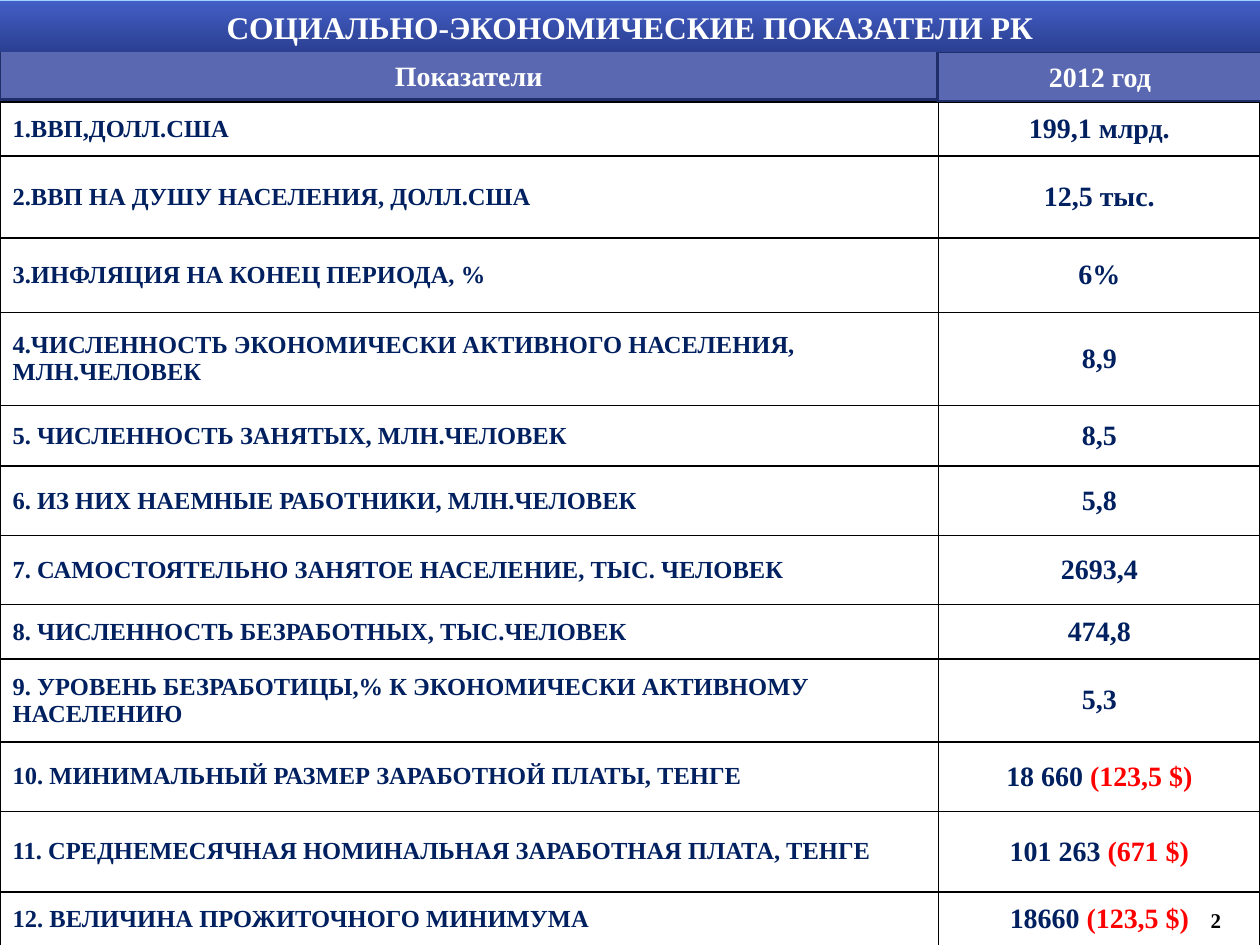
import dataclasses

import lxml.etree
import pptx
import pptx.dml.color
import pptx.enum.shapes
import pptx.enum.text
import pptx.oxml.ns
import pptx.util

Inches = pptx.util.Inches
PP_ALIGN = pptx.enum.text.PP_ALIGN
MIDDLE = pptx.enum.text.MSO_ANCHOR.MIDDLE


@dataclasses.dataclass(frozen=True)
class Theme:
    font: str = "Times New Roman"
    background: str = "9ED5FF"
    title_top: str = "435EC5"
    title_bottom: str = "2B4092"
    header: str = "5968B0"
    header_line: str = "1F2E69"
    text: str = "002060"
    accent: str = "FF0000"
    white: str = "FFFFFF"
    black: str = "000000"
    title_size: int = 18
    value_size: int = 16
    label_size: int = 14
    number_size: int = 12


THEME = Theme()

COLUMN_WIDTHS = (7.45, 2.55)
INDICATORS = [
    (0.43, "1.ВВП,ДОЛЛ.США", "199,1 млрд.", ""),
    (0.65, "2.ВВП НА ДУШУ НАСЕЛЕНИЯ, ДОЛЛ.США", "12,5 тыс.", ""),
    (0.59, "3.ИНФЛЯЦИЯ НА КОНЕЦ ПЕРИОДА, %", "6%", ""),
    (0.74, "4.ЧИСЛЕННОСТЬ ЭКОНОМИЧЕСКИ АКТИВНОГО НАСЕЛЕНИЯ, МЛН.ЧЕЛОВЕК", "8,9", ""),
    (0.48, "5. ЧИСЛЕННОСТЬ ЗАНЯТЫХ, МЛН.ЧЕЛОВЕК", "8,5", ""),
    (0.55, "6. ИЗ НИХ НАЕМНЫЕ РАБОТНИКИ, МЛН.ЧЕЛОВЕК", "5,8", ""),
    (0.55, "7. САМОСТОЯТЕЛЬНО ЗАНЯТОЕ НАСЕЛЕНИЕ, ТЫС. ЧЕЛОВЕК", "2693,4", ""),
    (0.43, "8. ЧИСЛЕННОСТЬ БЕЗРАБОТНЫХ, ТЫС.ЧЕЛОВЕК", "474,8", ""),
    (0.66, "9. УРОВЕНЬ БЕЗРАБОТИЦЫ,% К ЭКОНОМИЧЕСКИ АКТИВНОМУ НАСЕЛЕНИЮ", "5,3", ""),
    (0.55, "10. МИНИМАЛЬНЫЙ РАЗМЕР ЗАРАБОТНОЙ ПЛАТЫ, ТЕНГЕ", "18 660 ", "(123,5 $)"),
    (0.64, "11. СРЕДНЕМЕСЯЧНАЯ НОМИНАЛЬНАЯ ЗАРАБОТНАЯ ПЛАТА, ТЕНГЕ", "101 263 ", "(671 $)"),
    (0.43, "12. ВЕЛИЧИНА ПРОЖИТОЧНОГО МИНИМУМА", "18660 ", "(123,5 $)"),
]


def rgb(color):
    return pptx.dml.color.RGBColor.from_string(color)


def format_run(r, size, color):
    r.font.name = THEME.font
    r.font.size = pptx.util.Pt(size)
    r.font.bold = True
    r.font.color.rgb = rgb(color)


def set_text(tf, text, size, color, align=PP_ALIGN.CENTER):
    tf.text = text
    p = tf.paragraphs[0]
    p.alignment = align
    format_run(p.runs[0], size, color)
    return p


def add_title(s, text):
    sp = s.shapes.title
    sp.left, sp.top, sp.width, sp.height = map(Inches, (0, 0.01, 10, 0.4))
    sp.fill.gradient()
    sp.fill.gradient_angle = 270
    for stop, color in zip(sp.fill.gradient_stops, (THEME.title_top, THEME.title_bottom)):
        stop.color.rgb = rgb(color)
    tf = sp.text_frame
    tf.auto_size = pptx.enum.text.MSO_AUTO_SIZE.NONE
    tf.vertical_anchor = MIDDLE
    set_text(tf, text, THEME.title_size, THEME.white)
    sp.element.getparent().append(sp.element)


def add_header(s, left, top, width, text):
    sp = s.shapes.add_shape(
        pptx.enum.shapes.MSO_SHAPE.RECTANGLE,
        Inches(left), Inches(top), Inches(width), Inches(0.39),
    )
    sp.shadow.inherit = False
    sp.fill.solid()
    sp.fill.fore_color.rgb = rgb(THEME.header)
    sp.line.color.rgb = rgb(THEME.header_line)
    sp.line.width = pptx.util.Pt(1.25)
    tf = sp.text_frame
    tf.margin_left = tf.margin_right = tf.margin_top = tf.margin_bottom = 0
    tf.vertical_anchor = MIDDLE
    set_text(tf, text, THEME.value_size, THEME.white)


def set_borders(cell):
    qn = pptx.oxml.ns.qn
    tc_pr = cell._tc.get_or_add_tcPr()
    for i, side in enumerate(("a:lnL", "a:lnR", "a:lnT", "a:lnB")):
        ln = lxml.etree.Element(qn(side), w=str(pptx.util.Pt(1)))
        fill = lxml.etree.SubElement(ln, qn("a:solidFill"))
        lxml.etree.SubElement(fill, qn("a:srgbClr"), val=THEME.black)
        tc_pr.insert(i, ln)


def add_indicator_table(s):
    heights = [row[0] for row in INDICATORS]
    table = s.shapes.add_table(
        len(INDICATORS), len(COLUMN_WIDTHS),
        Inches(0), Inches(0.81), Inches(sum(COLUMN_WIDTHS)), Inches(sum(heights)),
    ).table
    table.first_row = table.horz_banding = False
    for column, width in zip(table.columns, COLUMN_WIDTHS):
        column.width = Inches(width)
    for i, (height, label, value, dollars) in enumerate(INDICATORS):
        table.rows[i].height = Inches(height)
        label_cell, value_cell = table.cell(i, 0), table.cell(i, 1)
        set_text(label_cell.text_frame, label, THEME.label_size, THEME.text, PP_ALIGN.LEFT)
        p = set_text(value_cell.text_frame, value, THEME.value_size, THEME.text)
        if dollars:
            r = p.add_run()
            r.text = dollars
            format_run(r, THEME.value_size, THEME.accent)
        for cell in (label_cell, value_cell):
            cell.vertical_anchor = MIDDLE
            cell.fill.solid()
            cell.fill.fore_color.rgb = rgb(THEME.white)
            set_borders(cell)


def add_page_number(s, number):
    tf = s.shapes.add_textbox(Inches(9.3), Inches(7.1), Inches(0.7), Inches(0.4)).text_frame
    tf.word_wrap = True
    tf.vertical_anchor = MIDDLE
    set_text(tf, number, THEME.number_size, THEME.black)


def main():
    prs = pptx.Presentation()
    prs.slide_width, prs.slide_height = Inches(10), Inches(7.5)
    s = prs.slides.add_slide(prs.slide_layouts[5])
    s.background.fill.solid()
    s.background.fill.fore_color.rgb = rgb(THEME.background)
    add_header(s, 0, 0.4, 7.44, "Показатели")
    add_indicator_table(s)
    add_header(s, 7.44, 0.41, 2.58, "2012 год")
    add_title(s, "СОЦИАЛЬНО-ЭКОНОМИЧЕСКИЕ ПОКАЗАТЕЛИ РК")
    add_page_number(s, "2")
    prs.save("out.pptx")


if __name__ == "__main__":
    main()
